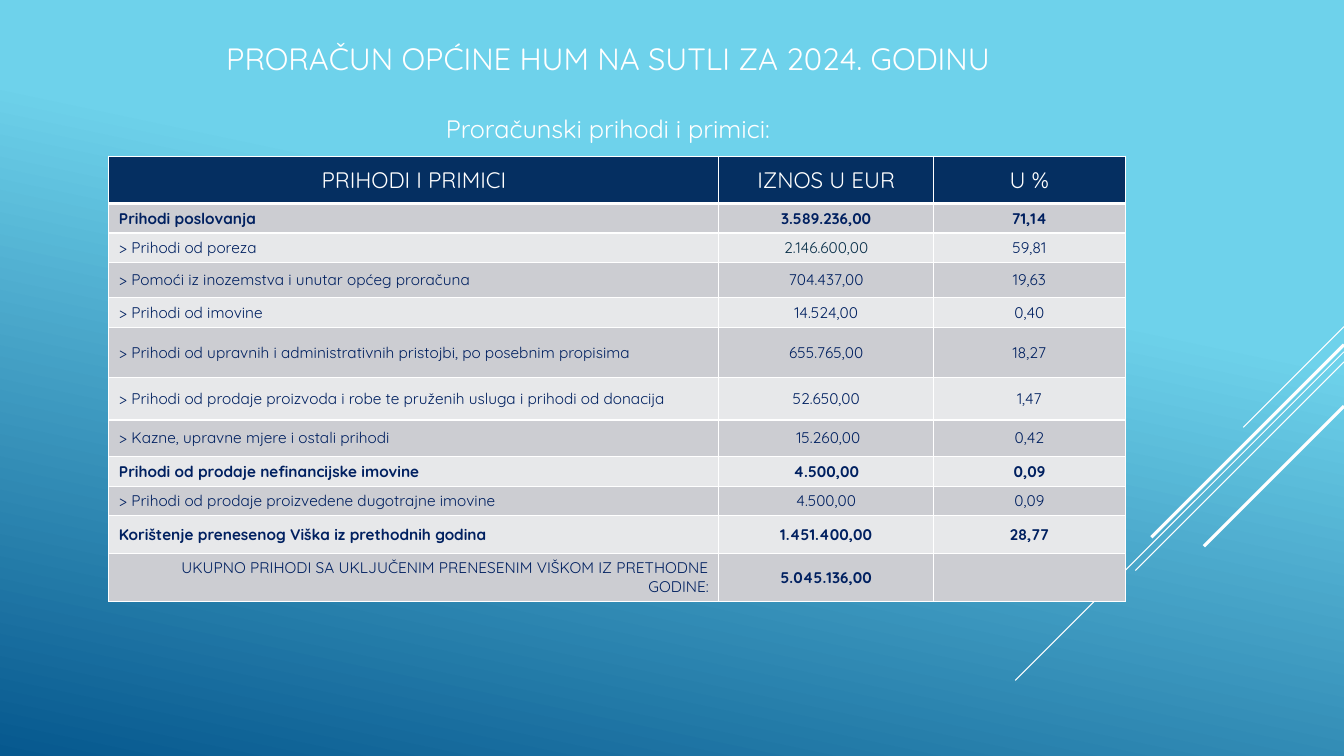
from lxml.etree import SubElement, fromstring
from pptx import Presentation
from pptx.dml.color import RGBColor
from pptx.enum.shapes import MSO_CONNECTOR
from pptx.enum.text import MSO_ANCHOR, MSO_AUTO_SIZE, PP_ALIGN
from pptx.oxml.ns import nsdecls, qn
from pptx.util import Inches, Pt

WHITE = RGBColor(0xFF, 0xFF, 0xFF)
NAVY = RGBColor(0x05, 0x2F, 0x61)
INK = RGBColor(0x00, 0x20, 0x60)
SLATE = RGBColor(0x0A, 0x30, 0x4A)
DARK = RGBColor(0xCC, 0xCD, 0xD2)
PALE = RGBColor(0xE7, 0xE8, 0xEA)
SKY = RGBColor(0x6E, 0xD2, 0xEB)
DEEP = RGBColor(0x06, 0x58, 0x8E)
FONT = "Quicksand"

TITLE = [
    ("PRORAČUN OPĆINE HUM NA SUTLI ZA 2024. GODINU", 22, 0),
    ("Proračunski prihodi i primici:", 18, 26),
]
HEAD = ("PRIHODI I PRIMICI", "IZNOS U EUR", "U %")
ROWS = [
    ("Prihodi poslovanja", "3.589.236,00", "71,14"),
    ("> Prihodi od poreza", "2.146.600,00", "59,81"),
    ("> Pomoći iz inozemstva i unutar općeg proračuna", "704.437,00", "19,63"),
    ("> Prihodi od imovine", "14.524,00", "0,40"),
    ("> Prihodi od upravnih i administrativnih pristojbi, po posebnim propisima",
     "655.765,00", "18,27"),
    ("> Prihodi od prodaje proizvoda i robe te pruženih usluga i prihodi od donacija",
     "52.650,00", "1,47"),
    ("> Kazne, upravne mjere i ostali prihodi", " 15.260,00", "0,42"),
    ("Prihodi od prodaje nefinancijske imovine", "4.500,00", "0,09"),
    ("> Prihodi od prodaje proizvedene dugotrajne imovine", "4.500,00", "0,09"),
    ("Korištenje prenesenog Viška iz prethodnih godina", "1.451.400,00", "28,77"),
    ("UKUPNO PRIHODI SA UKLJUČENIM PRENESENIM VIŠKOM IZ PRETHODNE GODINE:",
     "5.045.136,00", ""),
]
WIDTHS = (6.05, 2.13, 1.9)
HEIGHTS = (0.47, 0.24, 0.27, 0.35, 0.26, 0.5, 0.42, 0.36, 0.3, 0.29, 0.37, 0.47)
EDGE = 13.33
RAYS = [
    (3.24, 1.0, 0.75),
    (3.49, 3.26, 0.75),
    (3.59, 2.07, 0.75),
    (3.42, 1.91, 2.25),
    (4.03, 1.39, 2.25),
]


def add_ray(slide, top, run, width):
    ray = slide.shapes.add_connector(
        MSO_CONNECTOR.STRAIGHT, Inches(EDGE), Inches(top),
        Inches(EDGE - run), Inches(top + run))
    ray.line.color.rgb = WHITE
    ray.line.width = Pt(width)
    SubElement(ray._element.spPr, qn("a:effectLst"))


def set_font(para, size, color, bold=False):
    para.font.name = FONT
    para.font.size = Pt(size)
    para.font.bold = bold
    para.font.color.rgb = color


def add_edges(cell, row):
    widths = {"L": 1, "R": 1, "T": 3 if row == 1 else 1, "B": 3 if row == 0 else 1}
    props = cell._tc.get_or_add_tcPr()
    for i, (side, width) in enumerate(widths.items()):
        props.insert(i, fromstring(
            f'<a:ln{side} {nsdecls("a")} w="{Pt(width)}"><a:solidFill>'
            f'<a:srgbClr val="{WHITE}"/></a:solidFill></a:ln{side}>'))


def fill_cell(cell, text, row, col):
    total = row == len(ROWS)
    cell.text = text
    cell.vertical_anchor = MSO_ANCHOR.TOP if row == 1 else MSO_ANCHOR.MIDDLE
    cell.fill.solid()
    para = cell.text_frame.paragraphs[0]
    if row == 0:
        cell.fill.fore_color.rgb = NAVY
        set_font(para, 16, WHITE)
    else:
        cell.fill.fore_color.rgb = DARK if row % 2 else PALE
        bold = col > 0 if total else not ROWS[row - 1][0].startswith(">")
        set_font(para, 11, SLATE if (row, col) == (2, 1) else INK, bold)
    if row == 0 or col > 0:
        para.alignment = PP_ALIGN.CENTER
    else:
        para.alignment = PP_ALIGN.RIGHT if total else PP_ALIGN.LEFT
    add_edges(cell, row)


def add_title(slide):
    title = slide.shapes.title
    title.left, title.top = Inches(0.74), Inches(0.16)
    title.width, title.height = Inches(10.58), Inches(1.5)
    frame = title.text_frame
    frame.text = "\n".join(text for text, size, gap in TITLE)
    frame.auto_size = MSO_AUTO_SIZE.NONE
    frame.vertical_anchor = MSO_ANCHOR.MIDDLE
    for para, (text, size, gap) in zip(frame.paragraphs, TITLE):
        para.alignment = PP_ALIGN.CENTER
        para.line_spacing = 1.0
        para.space_before = Pt(gap)
        set_font(para, size, WHITE)


def add_budget(slide):
    data = [HEAD] + ROWS
    table = slide.shapes.add_table(
        len(data), len(HEAD), Inches(1.08), Inches(1.55),
        Inches(sum(WIDTHS)), Inches(sum(HEIGHTS))).table
    for col, width in zip(table.columns, WIDTHS):
        col.width = Inches(width)
    for row, height in zip(table.rows, HEIGHTS):
        row.height = Inches(height)
    for r, texts in enumerate(data):
        for c, text in enumerate(texts):
            fill_cell(table.cell(r, c), text, r, c)


def main():
    deck = Presentation()
    deck.slide_width, deck.slide_height = Inches(EDGE), Inches(7.5)
    slide = deck.slides.add_slide(deck.slide_layouts[5])
    back = slide.background.fill
    back.gradient()
    back.gradient_angle = 360 - 102
    for stop, (place, color) in zip(back.gradient_stops, [(0.35, SKY), (1, DEEP)]):
        stop.position = place
        stop.color.rgb = color
    for ray in RAYS:
        add_ray(slide, *ray)
    add_title(slide)
    add_budget(slide)
    deck.save("out.pptx")


if __name__ == "__main__":
    main()
